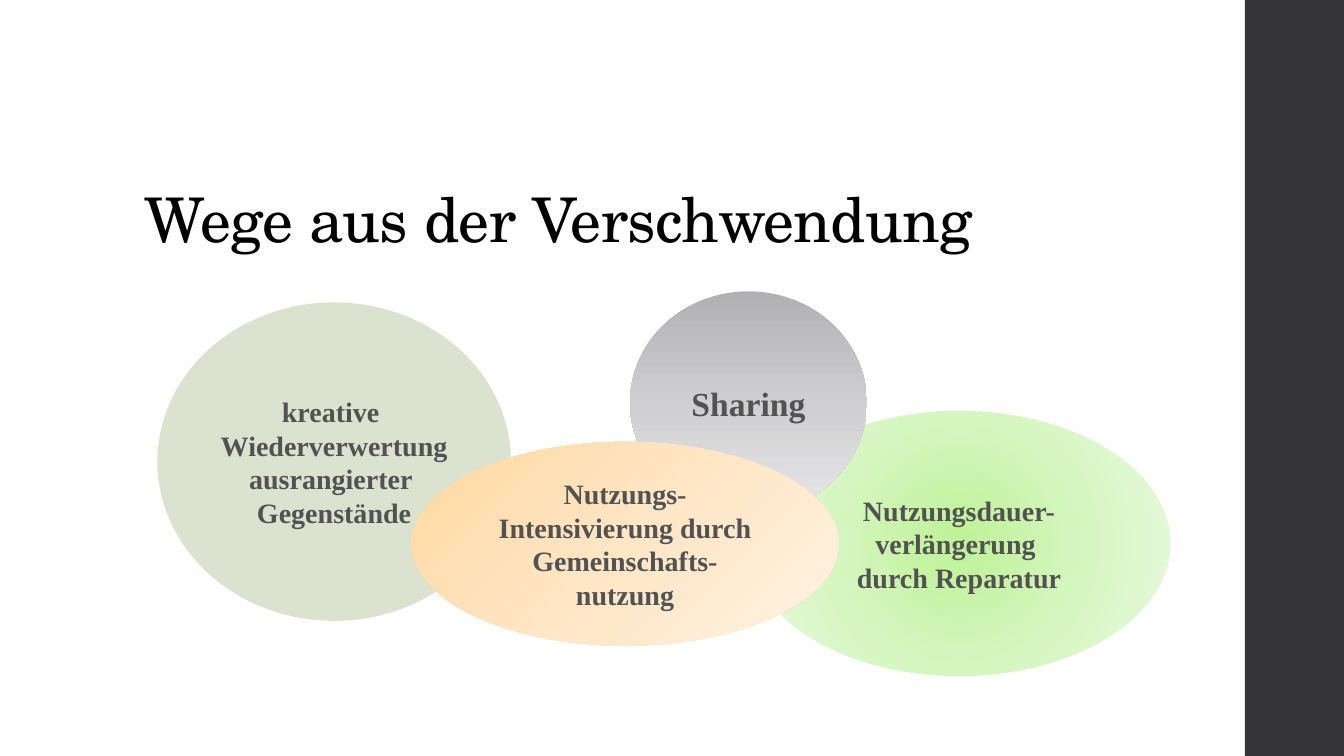
from dataclasses import dataclass
from typing import Optional

from pptx import Presentation
from pptx.dml.color import RGBColor as RGB
from pptx.enum.shapes import MSO_SHAPE as SHAPE
from pptx.enum.text import MSO_ANCHOR as ANCHOR, PP_ALIGN as ALIGN
from pptx.oxml import parse_xml
from pptx.oxml.ns import nsdecls, qn
from pptx.util import Pt


@dataclass(frozen=True)
class Theme:
    bar: str = "353537"
    title: str = "000000"
    label: str = "525252"
    sage: tuple = ("DCE2D0",)
    green: tuple = ("BEF297", "D5F6C0", "EAFAE0")
    grey: tuple = ("B1B1B4", "CFCFD1", "E7E7E8")
    orange: tuple = ("FFD8A0", "FFE6C5", "FFF2E3")
    title_font: str = "TeX Gyre Schola"
    label_font: str = "Times New Roman"
    title_size: float = 44
    label_size: float = 20
    large_size: float = 24


@dataclass(frozen=True)
class Bubble:
    text: str  # "\n" starts a paragraph, "\v" breaks a line
    box: tuple  # left, top, width, height in points
    colors: tuple  # one colour is solid, several make a gradient
    size: float
    angle: Optional[int] = None  # a gradient without an angle is radial


T = Theme()
W, H = 960, 540
BAR_LEFT, BAR_WIDTH = 889.2, 72

# Back to front
BUBBLES = [
    Bubble("Nutzungsdauer-verlängerung \ndurch Reparatur",
           (534.24, 293.76, 301.68, 188.9), T.green, T.label_size),
    Bubble("kreative \vWiederverwertung ausrangierter \vGegenstände",
           (112.4, 216, 252.6, 227.5), T.sage, T.label_size),
    Bubble("Sharing",
           (450, 208.08, 169.2, 159.12), T.grey, T.large_size, 90),
    Bubble("Nutzungs-\vIntensivierung durch Gemeinschafts-nutzung",
           (293.76, 315.6, 305.5, 145.6), T.orange, T.label_size, 45),
]


def set_gradient(sp, colors: tuple, angle: Optional[int]) -> None:
    """Fill with evenly spaced stops, linear or from the centre."""
    step = 100000 // (len(colors) - 1)
    stops = "".join(f'<a:gs pos="{i * step}"><a:srgbClr val="{c}"/></a:gs>'
                    for i, c in enumerate(colors))
    if angle is None:
        course = ('<a:path path="circle"><a:fillToRect l="50000" t="50000" '
                  'r="50000" b="50000"/></a:path>')
    else:
        course = f'<a:lin ang="{angle * 60000}" scaled="0"/>'
    sp.fill.gradient()
    old = sp._element.spPr.find(qn("a:gradFill"))
    old.getparent().replace(old, parse_xml(
        f'<a:gradFill {nsdecls("a")} rotWithShape="1">'
        f'<a:gsLst>{stops}</a:gsLst>{course}</a:gradFill>'))


def add_shape(slide, kind, box: tuple, colors: tuple,
              angle: Optional[int] = None):
    sp = slide.shapes.add_shape(kind, *map(Pt, box))
    sp.shadow.inherit = False
    sp.line.fill.background()
    if len(colors) > 1:
        set_gradient(sp, colors, angle)
    else:
        sp.fill.solid()
        sp.fill.fore_color.rgb = RGB.from_string(colors[0])
    return sp


def set_text(sp, text: str, font: str, size: float, color: str, bold: bool,
             align, anchor) -> None:
    tf = sp.text_frame
    tf.word_wrap = True
    tf.vertical_anchor = anchor
    tf.text = text
    for p in tf.paragraphs:
        p.alignment = align
        for r in p.runs:
            r.font.name = font
            r.font.size = Pt(size)
            r.font.bold = bold
            r.font.color.rgb = RGB.from_string(color)


def add_bubble(slide, bubble: Bubble) -> None:
    sp = add_shape(slide, SHAPE.OVAL, bubble.box, bubble.colors, bubble.angle)
    set_text(sp, bubble.text, T.label_font, bubble.size, T.label, True,
             ALIGN.CENTER, ANCHOR.MIDDLE)


def add_title(slide, text: str) -> None:
    sp = slide.shapes.add_textbox(Pt(96.5), Pt(83.5), Pt(756), Pt(103))
    set_text(sp, text, T.title_font, T.title_size, T.title, False,
             ALIGN.LEFT, ANCHOR.BOTTOM)
    p = sp.text_frame.paragraphs[0]
    p.line_spacing = 0.9
    # Slightly tightened letters
    p.runs[0].font._element.set("spc", "-50")


def main() -> None:
    prs = Presentation()
    prs.slide_width, prs.slide_height = Pt(W), Pt(H)
    s = prs.slides.add_slide(prs.slide_layouts[6])

    # Dark bar on the right edge
    add_shape(s, SHAPE.RECTANGLE, (BAR_LEFT, 0, W - BAR_LEFT, H), (T.bar,))

    # Overlapping bubbles
    for bubble in BUBBLES:
        add_bubble(s, bubble)

    # Title
    add_title(s, "Wege aus der Verschwendung")

    prs.save("out.pptx")


if __name__ == "__main__":
    main()
